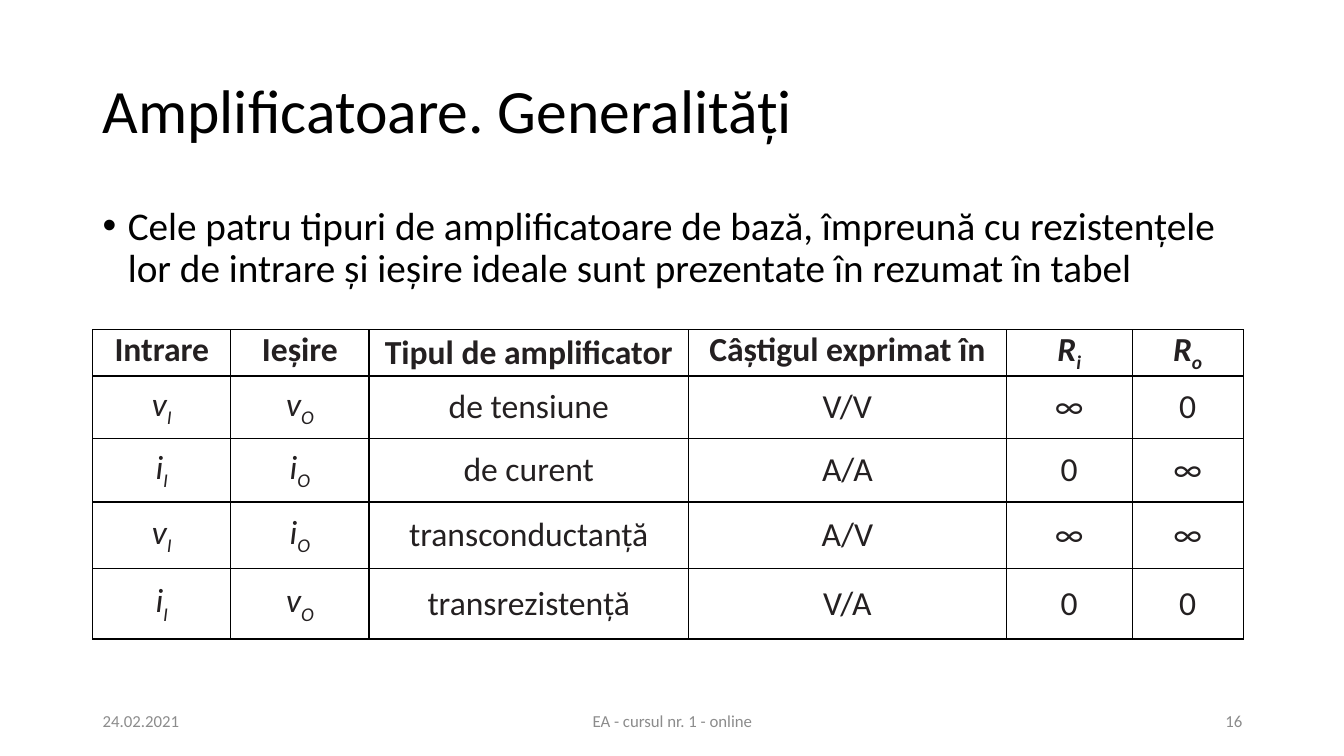
from dataclasses import dataclass

from lxml import etree
from pptx import Presentation
from pptx.dml.color import RGBColor
from pptx.enum.text import MSO_ANCHOR, PP_ALIGN
from pptx.oxml.ns import qn
from pptx.util import Inches, Pt

LEFT, CENTER, RIGHT = PP_ALIGN.LEFT, PP_ALIGN.CENTER, PP_ALIGN.RIGHT
TOP, MIDDLE = MSO_ANCHOR.TOP, MSO_ANCHOR.MIDDLE


@dataclass(frozen=True)
class Theme:
    """Colours, font and type sizes of the slide."""
    font: str = "Calibri"
    text: str = "000000"
    cell: str = "242021"
    footer: str = "8C8C8C"
    border: str = "000000"
    title_pt: int = 44
    body_pt: int = 28
    table_pt: int = 24
    footer_pt: int = 12
    border_pt: int = 1


THEME = Theme()
COLUMNS = [1.37, 1.37, 3.17, 3.15, 1.25, 1.1]
ROWS = [0.46, 0.62, 0.63, 0.66, 0.7]
AMPLIFIERS = [
    ["Intrare", "Ieșire", "Tipul de amplificator", "Câștigul exprimat în", "R_i", "R_o"],
    ["v_I", "v_O", "de tensiune", "V/V", "∞", "0"],
    ["i_I", "i_O", "de curent", "A/A", "0", "∞"],
    ["v_I", "i_O", "transconductanță", "A/V", "∞", "∞"],
    ["i_I", "v_O", "transrezistență", "V/A", "0", "0"],
]


def add_run(p, text, size, color, bold=False, italic=False, baseline=0):
    """Append one formatted run to a paragraph."""
    r = p.add_run()
    r.text = text
    r.font.name = THEME.font
    r.font.size = Pt(size)
    r.font.color.rgb = RGBColor.from_string(color)
    r.font.bold = bold
    r.font.italic = italic
    if baseline:
        r._r.get_or_add_rPr().set("baseline", str(baseline * 1000))


def add_text(slide, box, text, size, color, align=LEFT, anchor=MIDDLE):
    """Place a one-paragraph text box and return its paragraph."""
    tf = slide.shapes.add_textbox(*map(Inches, box)).text_frame
    tf.word_wrap = True
    tf.vertical_anchor = anchor
    p = tf.paragraphs[0]
    p.alignment = align
    add_run(p, text, size, color)
    return p


def add_title(slide, box, text):
    """Place the slide title."""
    p = add_text(slide, box, text, THEME.title_pt, THEME.text)
    p.line_spacing = 0.9


def add_bullet(slide, box, text):
    """Place the bulleted body paragraph."""
    p = add_text(slide, box, text, THEME.body_pt, THEME.text, anchor=TOP)
    p.line_spacing = 0.9
    p.space_before = Pt(10)
    pPr = p._p.get_or_add_pPr()
    pPr.set("marL", str(Inches(0.25)))
    pPr.set("indent", str(-Inches(0.25)))
    etree.SubElement(pPr, qn("a:buFont"), typeface="Arial")
    etree.SubElement(pPr, qn("a:buChar"), char="•")


def add_borders(cell):
    """Draw a solid line on each side of a cell."""
    tcPr = cell._tc.get_or_add_tcPr()
    for side in ("a:lnL", "a:lnR", "a:lnT", "a:lnB"):
        ln = etree.SubElement(tcPr, qn(side), w=str(Pt(THEME.border_pt)))
        fill = etree.SubElement(ln, qn("a:solidFill"))
        etree.SubElement(fill, qn("a:srgbClr"), val=THEME.border)


def fill_cell(cell, text, bold, anchor):
    """Format a cell; an underscore separates a symbol from its subscript."""
    add_borders(cell)
    cell.fill.background()
    cell.vertical_anchor = anchor
    cell.margin_left = cell.margin_right = Inches(0.14)
    cell.margin_top = cell.margin_bottom = 0
    p = cell.text_frame.paragraphs[0]
    p.alignment = CENTER
    symbol, _, subscript = text.partition("_")
    italic = bool(subscript)
    add_run(p, symbol, THEME.table_pt, THEME.cell, bold, italic)
    if subscript:
        add_run(p, subscript, THEME.table_pt, THEME.cell, bold, italic, -25)


def add_amplifier_table(slide, box, data):
    """Place the table of amplifier types."""
    frame = slide.shapes.add_table(len(ROWS), len(COLUMNS), *map(Inches, box))
    table = frame.table
    table.first_row = table.horz_banding = False
    for column, width in zip(table.columns, COLUMNS):
        column.width = Inches(width)
    for row, height in zip(table.rows, ROWS):
        row.height = Inches(height)
    for i, values in enumerate(data):
        for j, text in enumerate(values):
            anchor = TOP if i == 0 and j != 2 else MIDDLE
            fill_cell(table.cell(i, j), text, i == 0, anchor)


def add_footer(slide, box, date, course, number):
    """Place date, course name and slide number along the box."""
    left, top, width, height = box
    side, middle = 3, 4.5
    parts = [
        (left, side, date, LEFT),
        (left + (width - middle) / 2, middle, course, CENTER),
        (left + width - side, side, number, RIGHT),
    ]
    for x, w, text, align in parts:
        add_text(slide, (x, top, w, height), text, THEME.footer_pt, THEME.footer, align)


def main():
    """Build and save the slide."""
    prs = Presentation()
    prs.slide_width, prs.slide_height = Inches(13.33), Inches(7.5)
    slide = prs.slides.add_slide(prs.slide_layouts[6])
    left, width = 0.92, 11.5
    add_title(slide, (left, 0.4, width, 1.45), "Amplificatoare. Generalități")
    add_bullet(
        slide, (left, 2, width, 4.76),
        "Cele patru tipuri de amplificatoare de bază, împreună cu rezistențele "
        "lor de intrare și ieșire ideale sunt prezentate în rezumat în tabel",
    )
    add_footer(slide, (left, 6.95, width, 0.4),
               "24.02.2021", "EA - cursul nr. 1 - online", "16")
    add_amplifier_table(slide, (left, 3.27, sum(COLUMNS), sum(ROWS)), AMPLIFIERS)
    prs.save("out.pptx")


if __name__ == "__main__":
    main()
